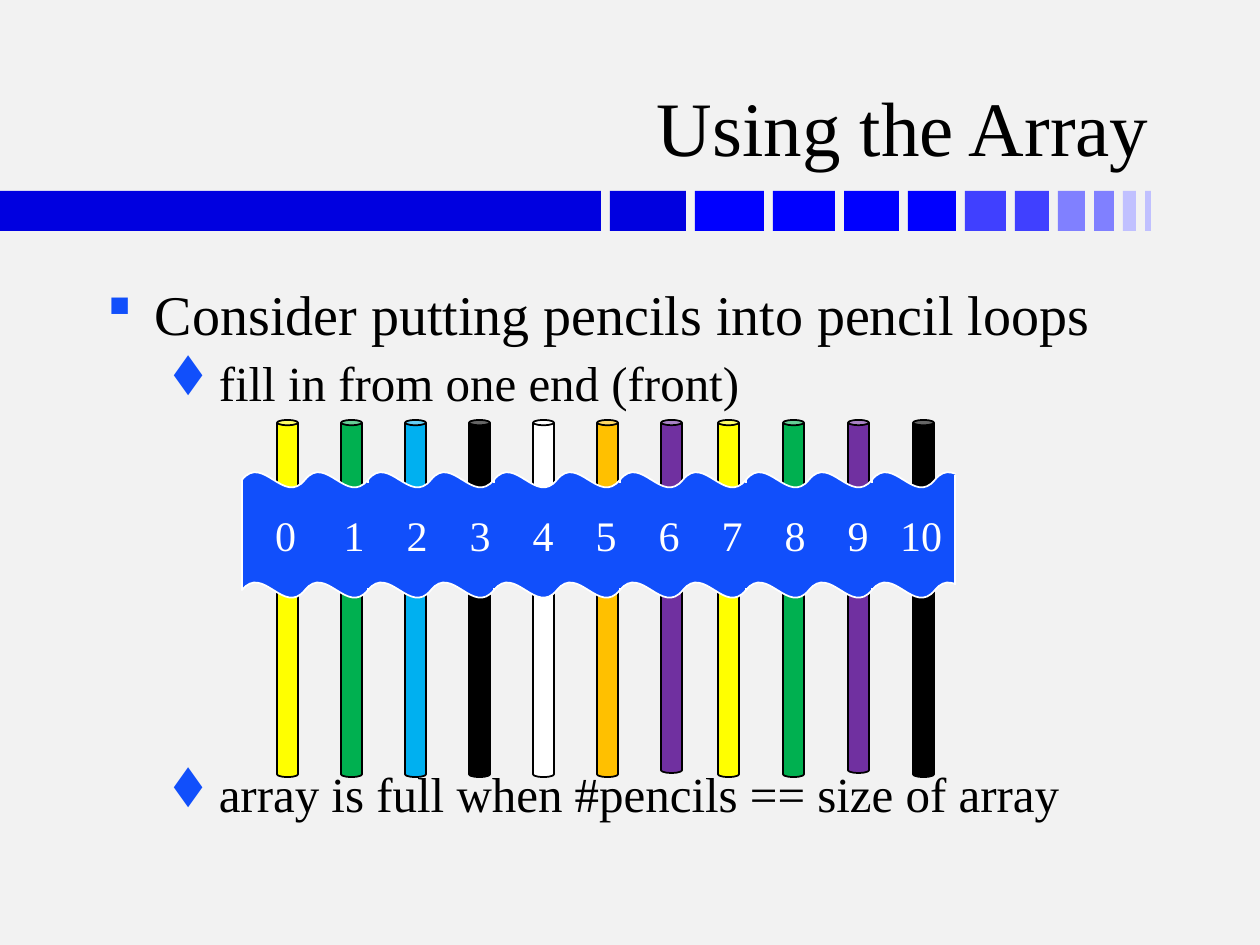
from dataclasses import dataclass

from lxml.etree import SubElement
from pptx import Presentation
from pptx.dml.color import RGBColor
from pptx.enum.shapes import MSO_CONNECTOR, MSO_SHAPE
from pptx.enum.text import MSO_ANCHOR, PP_ALIGN
from pptx.oxml.ns import qn
from pptx.util import Emu, Pt


@dataclass(frozen=True)
class Theme:
    font: str = "Times New Roman"
    symbols: str = "Wingdings"
    title: int = 44
    bullet: int = 32
    sub: int = 28
    number: int = 24
    paper: str = "F2F2F2"
    ink: str = "000000"
    white: str = "FFFFFF"
    accent: str = "114FFB"
    yellow: str = "FFFF00"
    green: str = "00B050"
    sky: str = "00B0F0"
    orange: str = "FFC000"
    purple: str = "7030A0"
    bars: tuple = ("0000E0", "0000E0", "0000FF", "0000FF", "0000FF", "0000FF",
                   "4040FF", "4040FF", "8080FF", "8080FF", "C0C0FF", "C0C0FF")


def px(n):
    return Emu(round(n * 914400 / 126))


class Deck:
    """Draws styled elements on the current slide."""

    def __init__(self, theme):
        self.t = theme
        self.prs = Presentation()
        self.prs.slide_width, self.prs.slide_height = px(1260), px(945)

    def add_slide(self):
        self.s = self.prs.slides.add_slide(self.prs.slide_layouts[6])
        fill = self.s.background.fill
        fill.solid()
        fill.fore_color.rgb = RGBColor.from_string(self.t.paper)

    def shape(self, kind, x, y, w, h, fill, line=None):
        sp = self.s.shapes.add_shape(kind, px(x), px(y), px(w), px(h))
        sp.shadow.inherit = False
        sp.fill.solid()
        sp.fill.fore_color.rgb = RGBColor.from_string(fill)
        if line:
            sp.line.color.rgb = RGBColor.from_string(line)
            sp.line.width = Pt(1)
        else:
            sp.line.fill.background()

    def line(self, x, y1, y2, color):
        c = self.s.shapes.add_connector(
            MSO_CONNECTOR.STRAIGHT, px(x), px(y1), px(x), px(y2))
        c.line.color.rgb = RGBColor.from_string(color)
        c.line.width = Pt(1)
        SubElement(c._element.spPr, qn("a:effectLst"))

    def text_box(self, x, y, w, h, anchor=MSO_ANCHOR.TOP):
        tf = self.s.shapes.add_textbox(px(x), px(y), px(w), px(h)).text_frame
        tf.word_wrap = True
        tf.vertical_anchor = anchor
        tf.margin_left = tf.margin_right = tf.margin_top = tf.margin_bottom = 0
        return tf

    def run(self, p, text, size, color):
        r = p.add_run()
        r.text = text
        r.font.name = self.t.font
        r.font.size = Pt(size)
        r.font.color.rgb = RGBColor.from_string(color)

    def bullet(self, p, text, level=0):
        char, margin, hang, size = (("§", 48, 48, self.t.bullet),
                                    ("t", 102, 39, self.t.sub))[level]
        p.level = level
        p.space_before = Pt(3 * level)
        pPr = p._p.get_or_add_pPr()
        pPr.set("marL", str(px(margin)))
        pPr.set("indent", str(px(-hang)))
        color = SubElement(pPr, qn("a:buClr"))
        SubElement(color, qn("a:srgbClr"), val=self.t.accent)
        SubElement(pPr, qn("a:buFont"), typeface=self.t.symbols,
                   pitchFamily="2", charset="2")
        SubElement(pPr, qn("a:buChar"), char=char)
        self.run(p, text, size, self.t.ink)

    def centre_tabs(self, p, stops):
        tabs = SubElement(p._p.get_or_add_pPr(), qn("a:tabLst"))
        for stop in stops:
            SubElement(tabs, qn("a:tab"), pos=str(px(stop)), algn="ctr")


def draw_header(d):
    x = 0
    for w, color in zip((601, *range(76, 5, -7)), d.t.bars):
        d.shape(MSO_SHAPE.RECTANGLE, x, 191, w, 40, color)
        x += w + 9
    p = d.text_box(107, 29, 1042, 143, MSO_ANCHOR.BOTTOM).paragraphs[0]
    p.alignment = PP_ALIGN.RIGHT
    d.run(p, "Using the Array", d.t.title, d.t.ink)


def draw_bullets(d):
    tf = d.text_box(107, 280, 1046, 130)
    d.bullet(tf.paragraphs[0], "Consider putting pencils into pencil loops")
    d.bullet(tf.add_paragraph(), "fill in from one end (front)", 1)
    tf = d.text_box(107, 764, 1046, 63)
    d.bullet(tf.paragraphs[0], "array is full when #pencils == size of array", 1)


def draw_pencils(d):
    t = d.t
    left = (t.yellow, t.green, t.sky, t.ink, t.white, t.orange, t.purple)
    right = (t.yellow, t.green, t.purple, t.ink)
    for start, step, colors in ((277, 64, left), (718, 65, right)):
        for i, color in enumerate(colors):
            height = 353 if color == t.purple else 357
            d.shape(MSO_SHAPE.CAN, start + i * step, 420, 21, height, color, t.ink)


def draw_loops(d):
    t = d.t
    lefts = range(242, 873, 126)
    for x in lefts:
        d.shape(MSO_SHAPE.DOUBLE_WAVE, x, 472, 126, 126, t.accent, t.white)
    d.shape(MSO_SHAPE.RECTANGLE, 956, 472, 63, 136, t.paper)
    d.line(955, 475, 585, t.white)
    for x in lefts[1:]:
        d.line(x, 483, 588, t.accent)
    p = d.text_box(275, 510, 689, 51).paragraphs[0]
    d.centre_tabs(p, range(79, 79 + 63 * 10, 63))
    d.run(p, "\t".join(str(n) for n in range(11)), t.number, t.white)


def main():
    d = Deck(Theme())
    d.add_slide()
    draw_header(d)
    draw_bullets(d)
    draw_pencils(d)
    draw_loops(d)
    d.prs.save("out.pptx")


if __name__ == "__main__":
    main()
